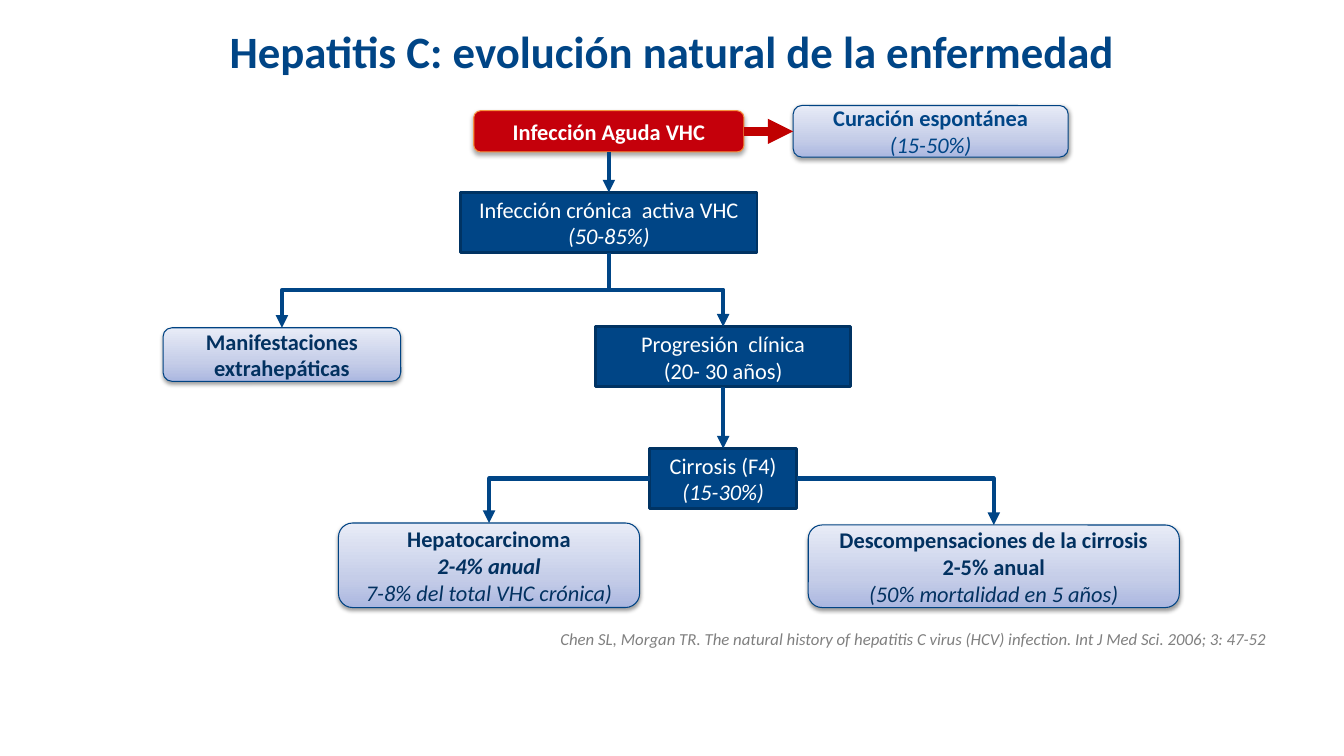
import copy

import pptx
import pptx.dml.color
import pptx.enum.dml
import pptx.enum.shapes
import pptx.enum.text
import pptx.oxml
import pptx.oxml.ns
import pptx.util
from pptx.util import Cm

RGBColor = pptx.dml.color.RGBColor
MSO_SHAPE = pptx.enum.shapes.MSO_SHAPE
PP_ALIGN = pptx.enum.text.PP_ALIGN
qn = pptx.oxml.ns.qn

BLUE = RGBColor(0x00, 0x45, 0x86)
DARK_BLUE = RGBColor(0x00, 0x33, 0x63)
OUTLINE_BLUE = RGBColor(0x00, 0x43, 0x83)
NAVY = RGBColor(0x02, 0x31, 0x60)
RED = RGBColor(0xC5, 0x00, 0x0B)
ARROW_RED = RGBColor(0xC0, 0x00, 0x00)
ORANGE = RGBColor(0xF6, 0x92, 0x40)
WHITE = RGBColor(0xFF, 0xFF, 0xFF)
GRAY = RGBColor(0x80, 0x80, 0x80)
GRADIENT = [(0, RGBColor(0xAB, 0xB7, 0xE0)),
            (0.35, RGBColor(0xC5, 0xCD, 0xE8)),
            (1, RGBColor(0xE8, 0xEC, 0xF7))]

# Connection sites of a rectangle
TOP, LEFT, BOTTOM, RIGHT = range(4)
PLAIN, BOLD, ITALIC, BOLD_ITALIC = (
    (False, False), (True, False), (False, True), (True, True))


class Flowchart:
    font_name = "Calibri"

    def __init__(self, presentation):
        self.slide = presentation.slides.add_slide(presentation.slide_layouts[5])
        self.shapes = self.slide.shapes

    def set_lines(self, frame, lines, size, color, align=PP_ALIGN.CENTER):
        """Set (text, (bold, italic)) lines, one paragraph each."""
        frame.word_wrap = True
        for number, (text, (bold, italic)) in enumerate(lines):
            paragraph = frame.add_paragraph() if number else frame.paragraphs[0]
            paragraph.text = text
            paragraph.alignment = align
            font = paragraph.font
            font.name, font.size = self.font_name, pptx.util.Pt(size)
            font.bold, font.italic = bold, italic
            font.color.rgb = color

    def title(self, text, left, top, width, height):
        title = self.shapes.title
        title.left, title.top = Cm(left), Cm(top)
        title.width, title.height = Cm(width), Cm(height)
        title.text_frame.vertical_anchor = pptx.enum.text.MSO_ANCHOR.MIDDLE
        self.set_lines(title.text_frame, [(text, BOLD)], 32, BLUE)

    def reference(self, text, left, top, width, height):
        box = self.shapes.add_textbox(Cm(left), Cm(top), Cm(width), Cm(height))
        self.set_lines(box.text_frame, [(text, ITALIC)], 12, GRAY, PP_ALIGN.RIGHT)

    def box(self, kind, place, lines, color, line_color, line_width):
        box = self.shapes.add_shape(kind, *map(Cm, place))
        box.shadow.inherit = False
        box.line.color.rgb = line_color
        box.line.width = pptx.util.Pt(line_width)
        box.text_frame.vertical_anchor = pptx.enum.text.MSO_ANCHOR.MIDDLE
        self.set_lines(box.text_frame, lines, 16, color)
        return box

    def stage(self, place, *lines):
        box = self.box(MSO_SHAPE.RECTANGLE, place, lines, WHITE, DARK_BLUE, 2)
        box.fill.solid()
        box.fill.fore_color.rgb = BLUE
        return box

    def start(self, place, *lines):
        box = self.box(MSO_SHAPE.ROUNDED_RECTANGLE, place, lines, WHITE, ORANGE, 0.75)
        box.fill.solid()
        box.fill.fore_color.rgb = RED
        self.drop_shadow(box, 35, 1.8)
        return box

    def outcome(self, place, *lines, color=NAVY):
        box = self.box(MSO_SHAPE.ROUNDED_RECTANGLE, place, lines, color,
                       OUTLINE_BLUE, 0.75)
        box.fill.gradient()
        box.fill.gradient_angle = 90
        stops = box._element.spPr.find(".//" + qn("a:gsLst"))
        stops.insert(1, copy.deepcopy(stops[0]))
        for stop, (position, stop_color) in zip(box.fill.gradient_stops, GRADIENT):
            stop.position = position
            stop.color.rgb = stop_color
        self.drop_shadow(box, 38, 1.6)
        return box

    def drop_shadow(self, box, opacity, distance):
        effects = box._element.spPr.find(qn("a:effectLst"))
        effects.append(pptx.oxml.parse_xml(
            f'<a:outerShdw {pptx.oxml.ns.nsdecls("a")} '
            f'blurRad="{pptx.util.Pt(3.1)}" dist="{pptx.util.Pt(distance)}" '
            f'dir="5400000" rotWithShape="0"><a:srgbClr val="000000">'
            f'<a:alpha val="{opacity * 1000}"/></a:srgbClr></a:outerShdw>'))

    def arrow(self, source, source_site, target, target_site,
              preset="straightConnector1", color=BLUE, width=3):
        arrow = self.shapes.add_connector(
            pptx.enum.shapes.MSO_CONNECTOR.STRAIGHT, 0, 0, 0, 0)
        arrow.begin_connect(source, source_site)
        arrow.end_connect(target, target_site)
        arrow.line.color.rgb = color
        arrow.line.width = pptx.util.Pt(width)
        properties = arrow._element.spPr
        properties.find(qn("a:prstGeom")).set("prst", preset)
        line = properties.find(qn("a:ln"))
        line.append(line.makeelement(qn("a:tailEnd"), {"type": "triangle"}))
        properties.append(properties.makeelement(qn("a:effectLst"), {}))
        if preset == "bentConnector3":
            self.leave_downwards(arrow)

    def leave_downwards(self, arrow):
        """Turn an elbow so that its first and last legs are vertical."""
        to_right = arrow.end_x > arrow.begin_x
        center_x = arrow.left + arrow.width // 2
        center_y = arrow.top + arrow.height // 2
        arrow.width, arrow.height = arrow.height, arrow.width
        arrow.left = center_x - arrow.width // 2
        arrow.top = center_y - arrow.height // 2
        frame = arrow._element.spPr.find(qn("a:xfrm"))
        frame.set("rot", str((270 if to_right else 90) * 60000))
        frame.set("flipH", "1" if to_right else "0")


def main():
    presentation = pptx.Presentation()
    presentation.slide_width, presentation.slide_height = Cm(33.87), Cm(19.05)
    chart = Flowchart(presentation)

    # Title and citation
    chart.title("Hepatitis C: evolución natural de la enfermedad", 1.7, 0.43, 30.48, 1.68)
    chart.reference("Chen SL, Morgan TR. The natural history of hepatitis C virus (HCV) "
                    "infection. Int J Med Sci. 2006; 3: 47-52", 0, 15.72, 32.18, 0.81)

    # Stages of the disease
    acute = chart.start((11.94, 2.79, 6.81, 1.04), ("Infección Aguda VHC", BOLD))
    chronic = chart.stage((11.61, 4.85, 7.47, 1.52),
                          ("Infección crónica  activa VHC", PLAIN), ("(50-85%)", ITALIC))
    progression = chart.stage((15.01, 8.23, 6.43, 1.52),
                              ("Progresión  clínica", PLAIN), ("(20- 30 años)", PLAIN))
    cirrhosis = chart.stage((16.37, 11.3, 3.71, 1.52),
                            ("Cirrosis (F4)", PLAIN), ("(15-30%)", ITALIC))

    # Outcomes
    cure = chart.outcome((19.99, 2.66, 6.93, 1.3), ("Curación espontánea", BOLD),
                         ("(15-50%)", ITALIC), color=BLUE)
    extrahepatic = chart.outcome((4.11, 8.26, 5.99, 1.35),
                                 ("Manifestaciones extrahepáticas", BOLD))
    carcinoma = chart.outcome((8.53, 13.18, 7.59, 2.13), ("Hepatocarcinoma", BOLD),
                              ("2-4% anual", BOLD_ITALIC),
                              ("7-8% del total VHC crónica)", ITALIC))
    decompensation = chart.outcome((20.37, 13.23, 9.35, 2.08),
                                   ("Descompensaciones de la cirrosis", BOLD),
                                   ("2-5% anual", BOLD),
                                   ("(50% mortalidad en 5 años)", ITALIC))

    # Arrows
    chart.arrow(acute, RIGHT, cure, LEFT, color=ARROW_RED, width=6)
    chart.arrow(acute, BOTTOM, chronic, TOP)
    chart.arrow(chronic, BOTTOM, extrahepatic, TOP, "bentConnector3")
    chart.arrow(chronic, BOTTOM, progression, TOP, "bentConnector3")
    chart.arrow(progression, BOTTOM, cirrhosis, TOP)
    chart.arrow(cirrhosis, LEFT, carcinoma, TOP, "bentConnector2")
    chart.arrow(cirrhosis, RIGHT, decompensation, TOP, "bentConnector2")

    presentation.save("out.pptx")


if __name__ == "__main__":
    main()
